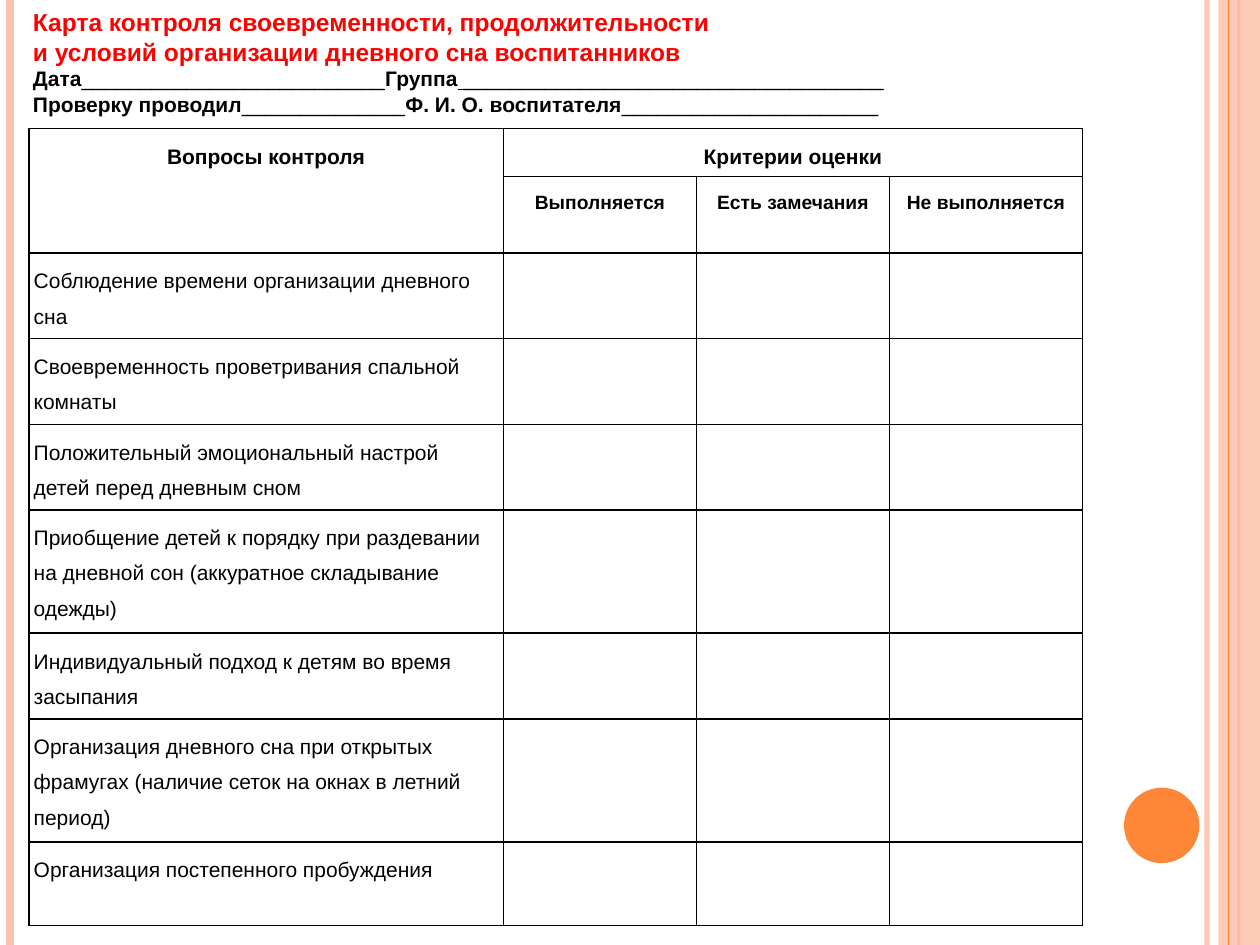
"""Build the nap-time checklist slide."""
from pptx import Presentation
from pptx.dml.color import RGBColor
from pptx.enum.shapes import MSO_CONNECTOR as Link, MSO_SHAPE as Kind
from pptx.enum.text import MSO_ANCHOR as Anchor, MSO_AUTO_SIZE as Fit, PP_ALIGN as Align
from pptx.oxml import parse_xml
from pptx.oxml.ns import qn
from pptx.util import Cm, Pt
from lxml.etree import SubElement

WIDE, HIGH = 25.4, 19.05
PALE, WARM, RED, INK = "FEC3AE", "FE8637", "FF0000", "000000"
NS = 'xmlns:a="http://schemas.openxmlformats.org/drawingml/2006/main"'

BIG = {"size": Pt(14), "bold": True}
BOLD = {"size": Pt(12), "bold": True}
MID = {"size": Pt(11), "bold": True}
THIN = {"size": Pt(12), "bold": False}
RULE = {"size": Pt(12), "bold": False, "underline": True}

HEAD = [
    [("Карта контроля своевременности, продолжительности", BIG, RED)],
    [("и условий организации дневного сна воспитанников", BIG, RED)],
    [("Дата", BOLD, INK), ("_" * 26, RULE, INK),
     ("Группа", BOLD, INK), (" " + "_" * 36, RULE, INK)],
    [("Проверку проводил", BOLD, INK), ("_" * 14, THIN, INK),
     ("Ф. И. О. воспитателя", BOLD, INK), ("_" * 22, THIN, INK)],
]
MARKS = ["Выполняется", "Есть замечания", "Не выполняется"]
TASKS = [
    ("Соблюдение времени организации дневного сна", 1.68),
    ("Своевременность проветривания спальной комнаты", 1.68),
    ("Положительный эмоциональный настрой детей перед дневным сном", 1.68),
    ("Приобщение детей к порядку при раздевании на дневной сон "
     "(аккуратное складывание одежды)", 2.41),
    ("Индивидуальный подход к детям во время засыпания", 1.68),
    ("Организация дневного сна при открытых фрамугах "
     "(наличие сеток на окнах в летний период)", 2.41),
    ("Организация постепенного пробуждения", 1.68),
]


def color(hue):
    return RGBColor.from_string(hue)


def apply(item, form):
    for key, val in form.items():
        setattr(item, key, val)


def fade(fill, part):
    tint = fill.find(".//" + qn("a:srgbClr"))
    SubElement(tint, qn("a:alpha"), val=str(part * 1000))


class Page:
    """Hold the font and the slide, and draw each kind of element."""

    def __init__(self, deck, face="Arial"):
        self.face = face
        self.slide = deck.slides.add_slide(deck.slide_layouts[5])
        self.pool = self.slide.shapes

    def text(self, para, words, form, hue=INK):
        run = para.add_run()
        run.text = words
        apply(run.font, {"name": self.face, **form})
        run.font.color.rgb = color(hue)

    def line(self, x, hue, width, part=100):
        bar = self.pool.add_connector(Link.STRAIGHT, Cm(x), 0, Cm(x), Cm(HIGH))
        bar.line.color.rgb = color(hue)
        bar.line.width = Pt(width)
        props = bar._element.spPr
        if part < 100:
            fade(props, part)
        SubElement(props, qn("a:effectLst"))

    def shape(self, kind, box, hue, part=100):
        form = self.pool.add_shape(kind, *map(Cm, box))
        form.shadow.inherit = False
        form.fill.solid()
        form.fill.fore_color.rgb = color(hue)
        form.line.fill.background()
        if part < 100:
            fade(form._element.spPr, part)

    def title(self, box, lines):
        head = self.pool.title
        apply(head, dict(zip(("left", "top", "width", "height"), map(Cm, box))))
        frame = head.text_frame
        apply(frame, {"word_wrap": True, "auto_size": Fit.SHAPE_TO_FIT_TEXT,
                      "vertical_anchor": Anchor.MIDDLE})
        for i, runs in enumerate(lines):
            para = frame.add_paragraph() if i else frame.paragraphs[0]
            para.alignment = Align.JUSTIFY
            for run in runs:
                self.text(para, *run)

    def cell(self, cell, words, form, side=Align.CENTER, gap=0):
        para = cell.text_frame.paragraphs[0]
        apply(para, {"alignment": side, "line_spacing": 1.5, "space_before": Pt(gap)})
        self.text(para, words, form)

    def table(self, spot, cols, rows):
        size = sum(cols), sum(rows)
        grid = self.pool.add_table(len(rows), len(cols), *map(Cm, spot + size)).table
        apply(grid, {"first_row": False, "horz_banding": False})
        for col, width in zip(grid.columns, cols):
            col.width = Cm(width)
        for row, height in zip(grid.rows, rows):
            row.height = Cm(height)
        for cell in grid.iter_cells():
            sides = ("left", "right", "top", "bottom")
            apply(cell, {"margin_" + side: Cm(0.1) for side in sides})
            cell.fill.background()
            props = cell._tc.get_or_add_tcPr()
            for i, side in enumerate("LRTB"):
                props.insert(i, parse_xml(
                    f'<a:ln{side} {NS} w="12700"><a:solidFill>'
                    f'<a:srgbClr val="{INK}"/></a:solidFill></a:ln{side}>'))
        return grid


def main():
    deck = Presentation()
    apply(deck, {"slide_width": Cm(WIDE), "slide_height": Cm(HIGH)})
    page = Page(deck)
    page.line(24.33, PALE, 3, 93)
    page.line(0.2, PALE, 4.5)
    page.line(24.97, WARM, 1.5)
    page.shape(Kind.RECTANGLE, (24.56, 0, 0.84, HIGH), PALE, 87)
    page.line(24.76, WARM, 0.75)
    page.shape(Kind.OVAL, (22.66, 15.88, 1.52, 1.52), WARM)

    rows = [0.94, 1.55] + [height for _, height in TASKS]
    grid = page.table((0.58, 2.59), [9.57] + [3.89] * 3, rows)
    grid.cell(0, 0).merge(grid.cell(1, 0))
    grid.cell(0, 1).merge(grid.cell(0, 3))
    page.cell(grid.cell(0, 0), "Вопросы контроля", BOLD)
    page.cell(grid.cell(0, 1), "Критерии оценки", BOLD)
    for i, mark in enumerate(MARKS, 1):
        page.cell(grid.cell(1, i), mark, MID)
    for i, (task, _) in enumerate(TASKS, 2):
        page.cell(grid.cell(i, 0), task, THIN, Align.LEFT, 2.9)

    page.title((0.41, 0, 24.2, 2.49), HEAD)
    deck.save("out.pptx")


if __name__ == "__main__":
    main()
